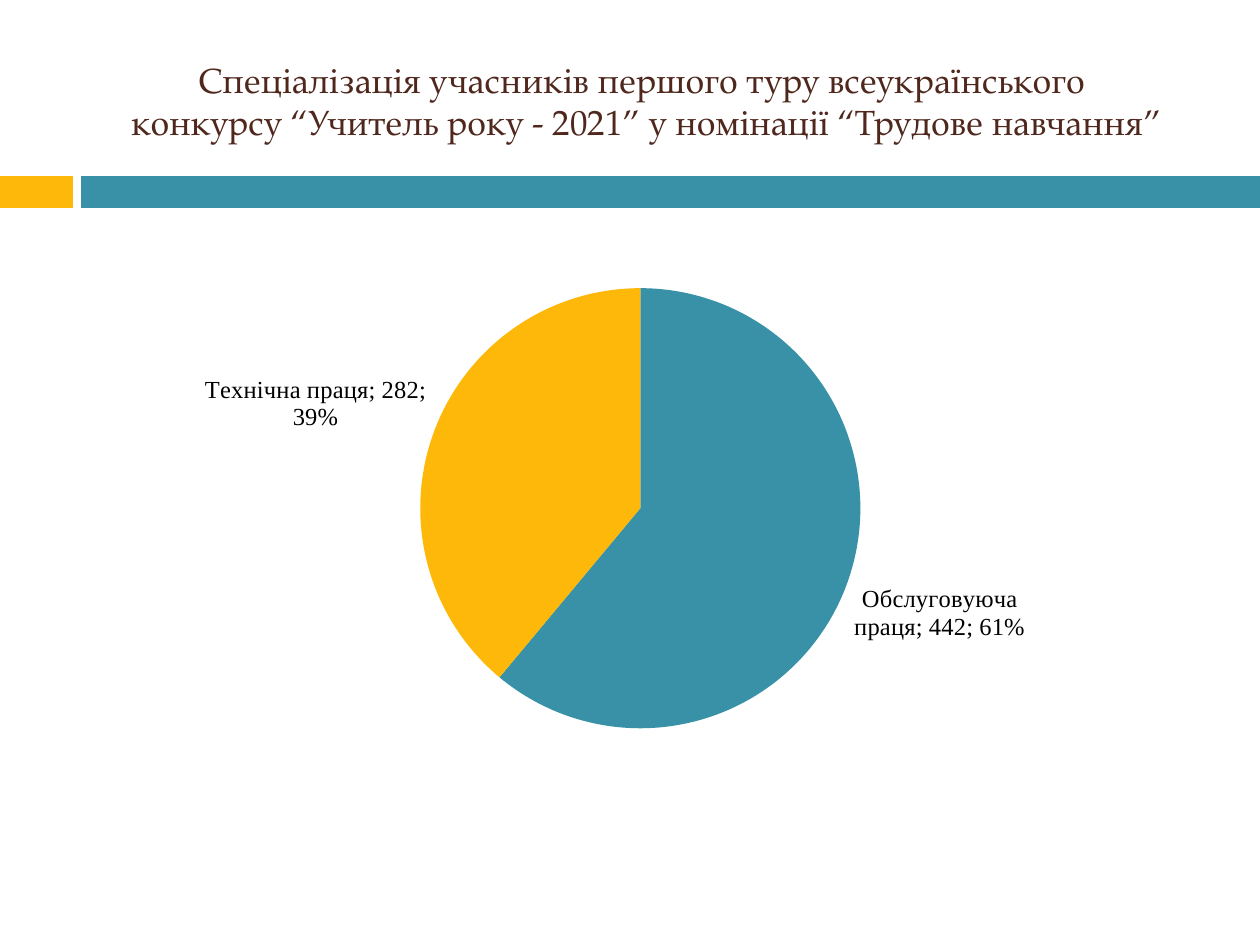
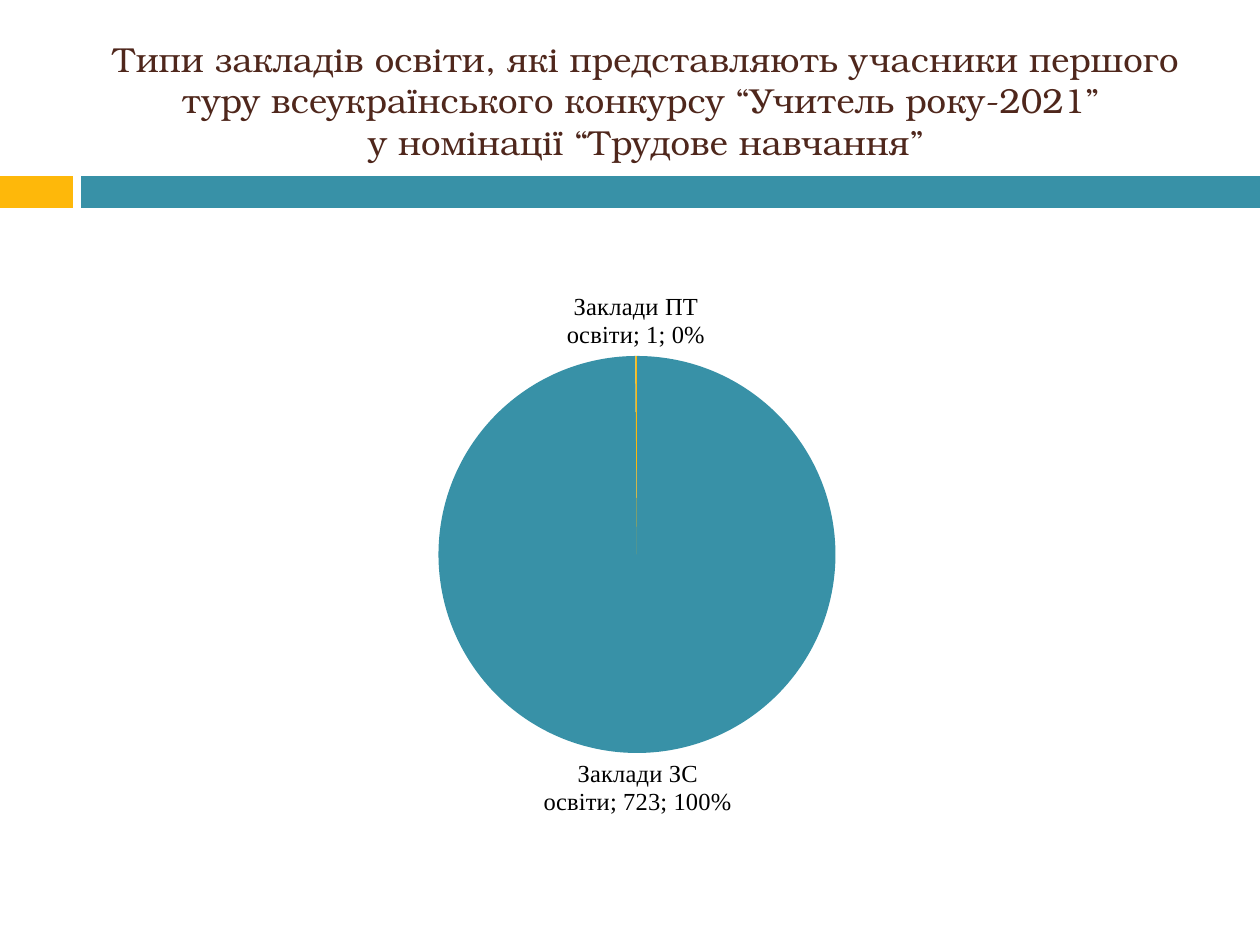
from lxml import etree
from pptx import Presentation
from pptx import util as u
from pptx.chart.data import CategoryChartData
from pptx.dml.color import RGBColor
from pptx.enum import chart as charts, shapes, text
from pptx.oxml.ns import qn

PX = 914400 / 126
TEAL = RGBColor(0x38, 0x91, 0xA7)
AMBER = RGBColor(0xFE, 0xB8, 0x0A)
BROWN = RGBColor(0x4F, 0x27, 0x1C)
BLACK = RGBColor(0, 0, 0)

TITLE_BOX = (84, 32, 1124, 136)
BANDS = [((0, 176, 73, 32), AMBER), ((81, 176, 1179, 32), TEAL)]

SLIDES = [
    {
        "title": "Спеціалізація учасників першого туру всеукраїнського \v"
                 "конкурсу “Учитель року - 2021” у номінації “Трудове навчання”",
        "font": "TeX Gyre Pagella",
        "size": 20,
        "chart_box": (84, 220, 1124, 620),
        "values": {"Обслуговуюча праця": 442, "Технічна праця": 282},
        "plot_area": {"x": 0.12, "y": 0.11, "w": 0.75, "h": 0.71},
    },
    {
        "title": "Типи закладів освіти, які представляють учасники першого "
                 "туру всеукраїнського конкурсу “Учитель року-2021” \v"
                 "у номінації “Трудове навчання”",
        "font": "TeX Gyre Bonum",
        "size": 19.8,
        "chart_box": (128, 276, 1018, 557),
        "values": {"Заклади ЗС освіти": 723, "Заклади ПТ освіти": 1},
        "plot_area": None,
    },
]


def to_emu(box):
    return [u.Emu(round(length * PX)) for length in box]


def set_plot_area(chart, fractions):
    """Fix the inner plot area, given as fractions of the chart frame."""
    plot_area = chart._chartSpace.chart.plotArea
    for old_layout in plot_area.findall(qn("c:layout")):
        plot_area.remove(old_layout)
    layout = etree.Element(qn("c:layout"))
    plot_area.insert(0, layout)
    manual = etree.SubElement(layout, qn("c:manualLayout"))
    settings = {"layoutTarget": "inner", "xMode": "edge", "yMode": "edge", **fractions}
    for tag, value in settings.items():
        etree.SubElement(manual, qn(f"c:{tag}")).set("val", str(value))


presentation = Presentation()
presentation.slide_width, presentation.slide_height = to_emu((1260, 945))

for content in SLIDES:
    slide = presentation.slides.add_slide(presentation.slide_layouts[5])

    for box, colour in BANDS:
        band = slide.shapes.add_shape(shapes.MSO_SHAPE.RECTANGLE, *to_emu(box))
        band.shadow.inherit = False
        band.fill.solid()
        band.fill.fore_color.rgb = colour
        band.line.fill.background()

    title = slide.shapes.title
    title.left, title.top, title.width, title.height = to_emu(TITLE_BOX)
    title_frame = title.text_frame
    title_frame.text = content["title"]
    title_frame.word_wrap = True
    title_frame.auto_size = text.MSO_AUTO_SIZE.NONE
    title_frame.vertical_anchor = text.MSO_ANCHOR.MIDDLE
    paragraph = title_frame.paragraphs[0]
    paragraph.alignment = text.PP_ALIGN.CENTER
    for run in paragraph.runs:
        run.font.name = content["font"]
        run.font.size = u.Pt(content["size"])
        run.font.color.rgb = BROWN

    chart_data = CategoryChartData()
    chart_data.categories = content["values"].keys()
    chart_data.add_series("Series 1", content["values"].values())
    chart = slide.shapes.add_chart(
        charts.XL_CHART_TYPE.PIE, *to_emu(content["chart_box"]), chart_data
    ).chart
    chart.has_title = False
    chart.has_legend = False
    chart.font.name = "Calibri"
    chart.font.size = u.Pt(10)
    chart.font.color.rgb = BLACK
    if content["plot_area"]:
        set_plot_area(chart, content["plot_area"])

    series = chart.plots[0].series[0]
    for index, colour in enumerate((TEAL, AMBER)):
        slice_format = series.points[index].format
        slice_format.fill.solid()
        slice_format.fill.fore_color.rgb = colour
        slice_format.line.fill.background()

    labels = series.data_labels
    labels.show_category_name = True
    labels.show_value = True
    labels.show_percentage = True
    labels.position = charts.XL_LABEL_POSITION.OUTSIDE_END
    labels.font.name = "Times New Roman"
    labels.font.size = u.Pt(14)
    labels.font.color.rgb = BLACK
    separator = etree.Element(qn("c:separator"))
    separator.text = "; "
    labels._element.find(qn("c:showBubbleSize")).addnext(separator)

presentation.save("out.pptx")
